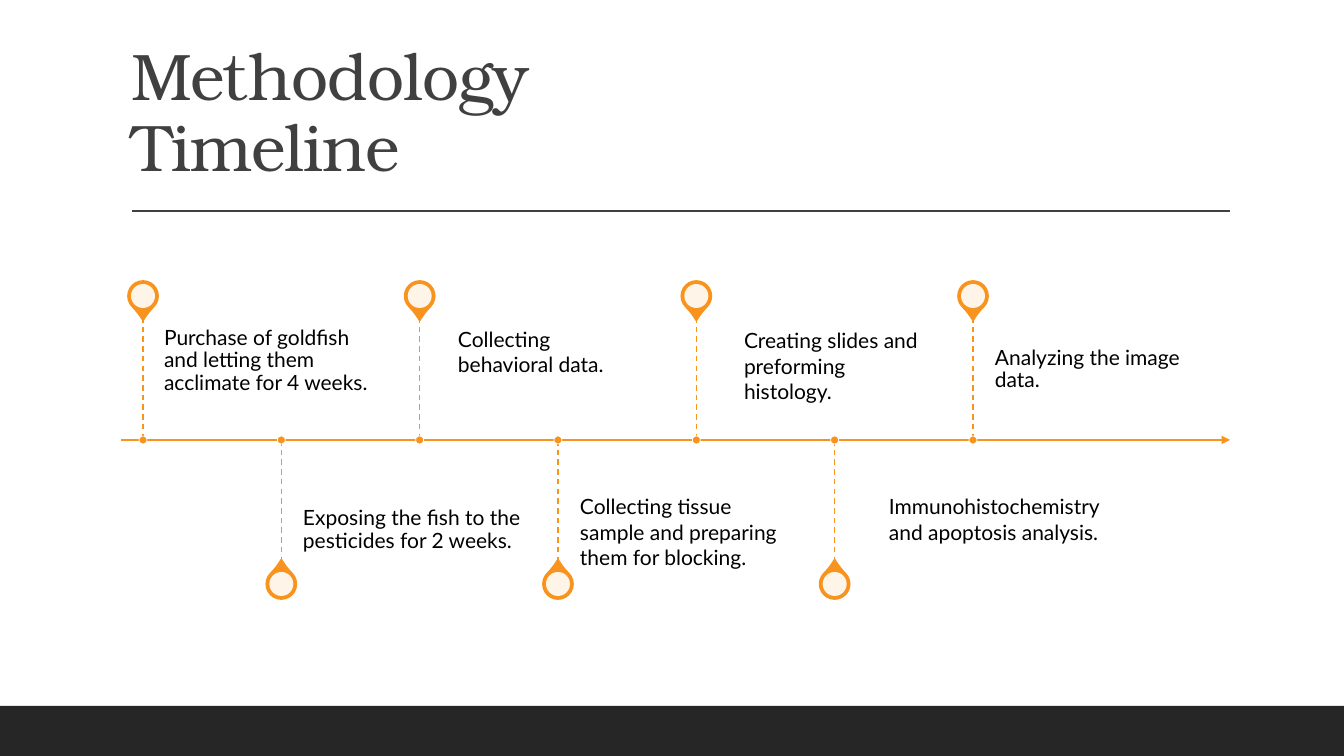
from lxml import etree
from pptx import Presentation
from pptx.dml.color import RGBColor
from pptx.enum.dml import MSO_LINE
from pptx.enum.shapes import MSO_CONNECTOR, MSO_SHAPE
from pptx.enum.text import MSO_ANCHOR, MSO_AUTO_SIZE, PP_ALIGN
from pptx.oxml.ns import qn
from pptx.util import Pt

STRAIGHT = MSO_CONNECTOR.STRAIGHT
RECT, OVAL, TEAR = MSO_SHAPE.RECTANGLE, MSO_SHAPE.OVAL, MSO_SHAPE.TEAR
TOP, BOTTOM = MSO_ANCHOR.TOP, MSO_ANCHOR.BOTTOM
DASH = MSO_LINE.DASH

TITLE = "Methodology \vTimeline"
PLAIN = (10, 5, 10, 5)
ABOVE = (0, 10, 10, 16)
BELOW = (0, 16, 0, 10)
STEPS = [
    ("Purchase of goldfish and letting them acclimate for 4 weeks.",
     (164, 317, 231, 123), ABOVE, TOP, 0.9),
    ("Exposing the fish to the pesticides for 2 weeks.",
     (303, 440, 231, 123), BELOW, BOTTOM, 0.9),
    ("Collecting behavioral data.", (448, 321, 211, 61), PLAIN, TOP, 1.0),
    ("Collecting tissue sample and preparing them for blocking.",
     (570, 489, 223, 87), PLAIN, TOP, 1.0),
    ("Creating slides and preforming histology.",
     (734, 323, 211, 61), PLAIN, TOP, 1.0),
    ("Immunohistochemistry and apoptosis analysis.",
     (879, 489, 247, 61), PLAIN, TOP, 1.0),
    ("Analyzing the image data.", (995, 337, 231, 84), ABOVE, TOP, 0.9),
]
COLORS = {"paper": "FFFFFF", "title": "404040", "band": "262626",
          "accent": "F8931D", "text": "000000"}
TITLE_FONT = {"name": "TeX Gyre Bonum", "size": Pt(47), "bold": False}
STEP_FONT = {"name": "Lato", "size": Pt(15)}

WIDTH, HEIGHT = 1344, 756
AXIS_LEFT, AXIS_RIGHT, AXIS_Y = 121, 1230, 440
FIRST_X, LAST_X = 143, 973
STEM, PIN_REACH = 123, 144
PIN, HOLE, DOT = 30, 24, 8


def px(value):
    return round(value * 914400 / 100.8)


def rgb(name):
    return RGBColor.from_string(COLORS[name])


def set_attrs(obj, values):
    for name, value in values.items():
        setattr(obj, name, value)


def add_shape(kind, box, fill, line=None, width=1):
    sp = slide.shapes.add_shape(kind, *map(px, box))
    sp.shadow.inherit = False
    sp.fill.solid()
    sp.fill.fore_color.rgb = rgb(fill)
    if line:
        sp.line.color.rgb = rgb(line)
        sp.line.width = Pt(width)
    else:
        sp.line.fill.background()
    return sp


def add_round(kind, x, y, size, *style):
    return add_shape(kind, (x - size / 2, y - size / 2, size, size), *style)


def add_line(x1, y1, x2, y2, color, width, dash=None):
    line = slide.shapes.add_connector(STRAIGHT, *map(px, (x1, y1, x2, y2)))
    line.line.color.rgb = rgb(color)
    line.line.width = Pt(width)
    if dash:
        line.line.dash_style = dash
    etree.SubElement(line._element.spPr, qn("a:effectLst"))
    return line


def add_marker(index):
    x = FIRST_X + index * (LAST_X - FIRST_X) / (len(STEPS) - 1)
    side = 1 if index % 2 else -1
    pin_y = AXIS_Y + side * PIN_REACH
    pin = add_round(TEAR, x, pin_y, PIN, "accent", "accent", 1.25)
    pin.adjustments[0] = 1.15
    pin.rotation = 315 if side > 0 else 135
    hole = add_round(OVAL, x, pin_y, HOLE, "paper")
    color = hole._element.spPr.find(qn("a:solidFill"))[0]
    etree.SubElement(color, qn("a:alpha"), val="90000")
    top, bottom = sorted((AXIS_Y, AXIS_Y + side * STEM))
    add_line(x, top, x, bottom, "accent", 1, DASH)
    add_round(OVAL, x, AXIS_Y, DOT, "accent", "paper", 0.5)


def add_step(text, box, insets, anchor, spacing):
    tf = slide.shapes.add_textbox(*map(px, box)).text_frame
    left, top, right, bottom = map(px, insets)
    set_attrs(tf, {"word_wrap": True, "vertical_anchor": anchor,
                   "margin_left": left, "margin_top": top,
                   "margin_right": right, "margin_bottom": bottom})
    p = tf.paragraphs[0]
    p.line_spacing = spacing
    r = p.add_run()
    r.text = text
    set_attrs(r.font, STEP_FONT)
    r.font.color.rgb = rgb("text")


prs = Presentation()
prs.slide_width, prs.slide_height = px(WIDTH), px(HEIGHT)
slide = prs.slides.add_slide(prs.slide_layouts[5])
slide.background.fill.solid()
slide.background.fill.fore_color.rgb = rgb("paper")

title = slide.shapes.title
set_attrs(title, {"left": px(121), "top": px(31),
                  "width": px(1109), "height": px(160)})
tf = title.text_frame
tf.text = TITLE
set_attrs(tf, {"vertical_anchor": BOTTOM, "word_wrap": True,
               "auto_size": MSO_AUTO_SIZE.NONE})
p = tf.paragraphs[0]
set_attrs(p, {"alignment": PP_ALIGN.LEFT, "line_spacing": 0.9})
for r in p.runs:
    set_attrs(r.font, TITLE_FONT)
    r.font.color.rgb = rgb("title")
    r._r.get_or_add_rPr().set("spc", "-50")

add_line(132, 211, 1230, 211, "title", 1)
add_shape(RECT, (0, 706, WIDTH, 50), "band")
axis = add_line(AXIS_LEFT, AXIS_Y, AXIS_RIGHT, AXIS_Y, "accent", 1.5)
etree.SubElement(axis.line._get_or_add_ln(), qn("a:tailEnd"), type="triangle")

for index, step in enumerate(STEPS):
    add_marker(index)
    add_step(*step)

prs.save("out.pptx")
